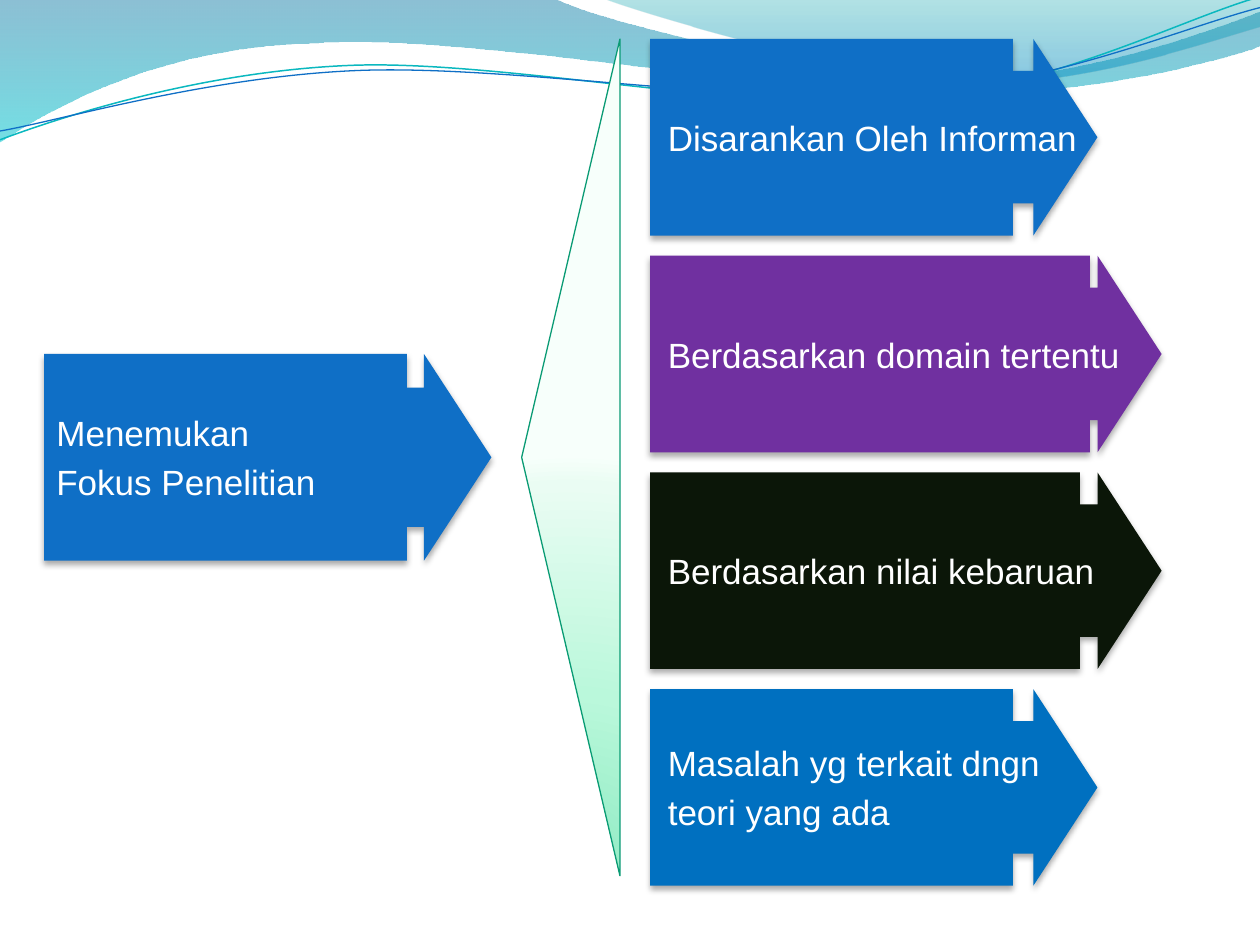
import dataclasses
import math

import pptx
import pptx.dml.color
import pptx.enum.shapes
import pptx.enum.text
import pptx.oxml
import pptx.oxml.ns
import pptx.util

Inches = pptx.util.Inches
Pt = pptx.util.Pt
SHAPES = pptx.enum.shapes.MSO_SHAPE
NS = pptx.oxml.ns.nsdecls("a")
qn = pptx.oxml.ns.qn


@dataclasses.dataclass(frozen=True)
class Theme:
    font: str = "Arial"
    size: int = 20
    white: str = "FFFFFF"
    blue: str = "0F6FC6"
    purple: str = "7030A0"
    black: str = "0B1608"
    azure: str = "0070C0"
    teal: str = "0AB8BF"
    green: str = "0A9B74"
    # Gradient stops: position %, colour, opacity %
    wave_left: tuple = ((0, "0074A1", 45), (100, "00C6CF", 55))
    wave_right: tuple = ((0, "00A1A9", 30), (80, "008BBF", 45))
    mint: tuple = ((0, "8DEAC2", 100), (43, "BAF8DB", 100),
                   (93, "EAFCF3", 100), (100, "F7FFFB", 100))
    # Shadow: colour, opacity %, blur pt, distance pt
    shadow: tuple = ("000000", 32, 3.5, 2.2)


LINEAR_DOWN = '<a:lin ang="5400000" scaled="0"/>'
RADIAL_BELOW = ('<a:path path="circle"><a:fillToRect l="50000" t="130000" '
                'r="50000" b="-30000"/></a:path>')


def rgb(value):
    return pptx.dml.color.RGBColor.from_string(value)


def color_xml(value, opacity):
    return (f'<a:srgbClr val="{value}"><a:alpha val="{opacity * 1000}"/>'
            '</a:srgbClr>')


def turn(point, center, degrees):
    """Turn a point clockwise about a center."""
    a = math.radians(degrees)
    dx, dy = point[0] - center[0], point[1] - center[1]
    return (center[0] + dx * math.cos(a) - dy * math.sin(a),
            center[1] + dx * math.sin(a) + dy * math.cos(a))


class SlideBuilder:
    def __init__(self, slide, theme):
        self.slide = slide
        self.theme = theme

    def gradient(self, sp, stops, direction):
        sp.fill.background()
        gs = "".join(f'<a:gs pos="{pos * 1000}">{color_xml(c, opacity)}</a:gs>'
                     for pos, c, opacity in stops)
        fill = pptx.oxml.parse_xml(
            f'<a:gradFill {NS} rotWithShape="1"><a:gsLst>{gs}</a:gsLst>'
            f'{direction}</a:gradFill>')
        spPr = sp.element.spPr
        spPr.replace(spPr.find(qn("a:noFill")), fill)

    def shadow(self, sp):
        color, opacity, blur, dist = self.theme.shadow
        sp.shadow.inherit = False
        effects = sp.element.spPr.find(qn("a:effectLst"))
        effects.append(pptx.oxml.parse_xml(
            f'<a:outerShdw {NS} blurRad="{Pt(blur)}" dist="{Pt(dist)}" '
            f'dir="5400000" rotWithShape="0">{color_xml(color, opacity)}'
            '</a:outerShdw>'))

    def outline(self, box, segments, closed, rotation=0):
        """Each segment is a line end (2 numbers) or a cubic (6 numbers)."""
        left, top, width, height = box
        center = left + width / 2, top + height / 2
        steps = [[turn(pt, center, -rotation) for pt in zip(seg[::2], seg[1::2])]
                 for seg in segments]
        ends = [(Inches(x), Inches(y)) for x, y in (pts[-1] for pts in steps)]
        builder = self.slide.shapes.build_freeform(*ends[0])
        builder.add_line_segments(ends[1:], close=closed)
        sp = builder.convert_to_shape()
        sp.left, sp.top, sp.width, sp.height = map(Inches, box)
        sp.rotation = rotation
        sp.shadow.inherit = False

        # Swap the straight path for one with real curves
        xml = ""
        for i, pts in enumerate(steps):
            tag = "moveTo" if i == 0 else "lnTo" if len(pts) == 1 else "cubicBezTo"
            coords = "".join(f'<a:pt x="{Inches(x - left)}" y="{Inches(y - top)}"/>'
                             for x, y in pts)
            xml += f"<a:{tag}>{coords}</a:{tag}>"
        track = pptx.oxml.parse_xml(
            f'<a:path {NS} w="{Inches(width)}" h="{Inches(height)}">{xml}'
            f'{"<a:close/>" if closed else ""}</a:path>')
        old = next(sp.element.spPr.iter(qn("a:path")))
        old.getparent().replace(old, track)
        return sp

    def wave(self, box, segments, stops):
        sp = self.outline(box, segments, True)
        self.gradient(sp, stops, LINEAR_DOWN)
        sp.line.fill.background()

    def curve(self, box, segments, color, width):
        sp = self.outline(box, segments, False, rotation=357.3)
        sp.fill.background()
        sp.line.color.rgb = rgb(color)
        sp.line.width = Pt(width)

    def callout(self, box, body, color, lines, indent=0.12):
        sp = self.slide.shapes.add_shape(
            SHAPES.RIGHT_ARROW_CALLOUT, *map(Inches, box))
        for i, value in enumerate((0.674, 0.5, 0.326, body)):
            sp.adjustments[i] = value
        sp.fill.solid()
        sp.fill.fore_color.rgb = rgb(color)
        sp.line.fill.background()
        self.shadow(sp)
        self.text(sp.text_frame, lines, indent)

    def text(self, tf, lines, indent):
        tf.word_wrap = False
        tf.vertical_anchor = pptx.enum.text.MSO_ANCHOR.MIDDLE
        tf.margin_left = tf.margin_right = Inches(0.02)
        tf.margin_top = tf.margin_bottom = Inches(0.01)
        for i, line in enumerate(lines):
            p = tf.add_paragraph() if i else tf.paragraphs[0]
            p.alignment = pptx.enum.text.PP_ALIGN.LEFT
            p.space_before = Pt(4)
            pPr = p._p.get_or_add_pPr()
            pPr.set("marL", str(Inches(indent)))
            pPr.set("indent", "0")
            r = p.add_run()
            r.text = line
            r.font.name = self.theme.font
            r.font.size = Pt(self.theme.size)
            r.font.color.rgb = rgb(self.theme.white)

    def triangle(self, box):
        sp = self.slide.shapes.add_shape(
            SHAPES.ISOSCELES_TRIANGLE, *map(Inches, box))
        sp.rotation = 270
        sp.shadow.inherit = False
        self.gradient(sp, self.theme.mint, RADIAL_BELOW)
        sp.line.color.rgb = rgb(self.theme.green)
        sp.line.width = Pt(0.75)


def main():
    prs = pptx.Presentation()
    prs.slide_width, prs.slide_height = Inches(10), Inches(7.5)
    theme = Theme()
    s = SlideBuilder(prs.slides.add_slide(prs.slide_layouts[6]), theme)

    # Wave header
    s.wave((-0.01, -0.01, 10.02, 1.14),
           [(0, 0), (4.4, -0.01), (4.76, 0.17, 6.64, 0.63, 7.58, 0.63),
            (8.53, 0.63, 9.58, 0.26, 10, 0.09), (10.01, 0.36),
            (9.83, 0.44, 8.7, 0.76, 7.46, 0.75),
            (6.22, 0.75, 3.82, 0.28, 2.57, 0.34),
            (1.29, 0.36, 0.46, 0.83, -0.01, 1.13), (0, 0)], theme.wave_left)
    s.wave((4.79, -0.01, 5.21, 0.7),
           [(4.79, -0.01), (5.09, 0.11, 6.82, 0.62, 7.69, 0.65),
            (8.56, 0.69, 9.61, 0.32, 10, 0.21), (10, 0), (4.79, -0.01)],
           theme.wave_right)
    s.curve((-0.02, 0.22, 10.02, 0.71),
            [(0, 1.11), (0.48, 0.93, 1.58, 0.57, 2.77, 0.52),
             (3.95, 0.47, 5.93, 0.89, 7.13, 0.8),
             (8.33, 0.71, 9.38, 0.15, 9.98, -0.02)], theme.teal, 0.85)
    s.curve((-0.02, 0.3, 10.03, 0.58),
            [(0, 1.04), (0.47, 0.96, 1.64, 0.61, 2.83, 0.56),
             (4.03, 0.51, 5.97, 0.84, 7.17, 0.75),
             (8.36, 0.67, 9.41, 0.21, 10, 0.06)], theme.blue, 0.75)

    # Topic on the left
    s.callout((0.35, 2.81, 3.55, 1.64), 0.811, theme.blue,
              [" Menemukan", " Fokus Penelitian"], indent=0)

    # Four ways to find it, evenly stacked
    ways = [
        (3.55, 0.811, theme.blue, ["Disarankan Oleh Informan"]),
        (4.06, 0.86, theme.purple, ["Berdasarkan domain tertentu"]),
        (4.06, 0.84, theme.black, ["Berdasarkan nilai kebaruan"]),
        (3.55, 0.811, theme.azure,
         ["Masalah yg terkait dngn", "teori yang ada"]),
    ]
    for i, (width, body, color, lines) in enumerate(ways):
        s.callout((5.16, 0.31 + 1.72 * i, width, 1.56), body, color, lines)

    # Triangle that fans out from the topic
    s.triangle((1.21, 3.24, 6.64, 0.78))

    prs.save("out.pptx")


if __name__ == "__main__":
    main()
